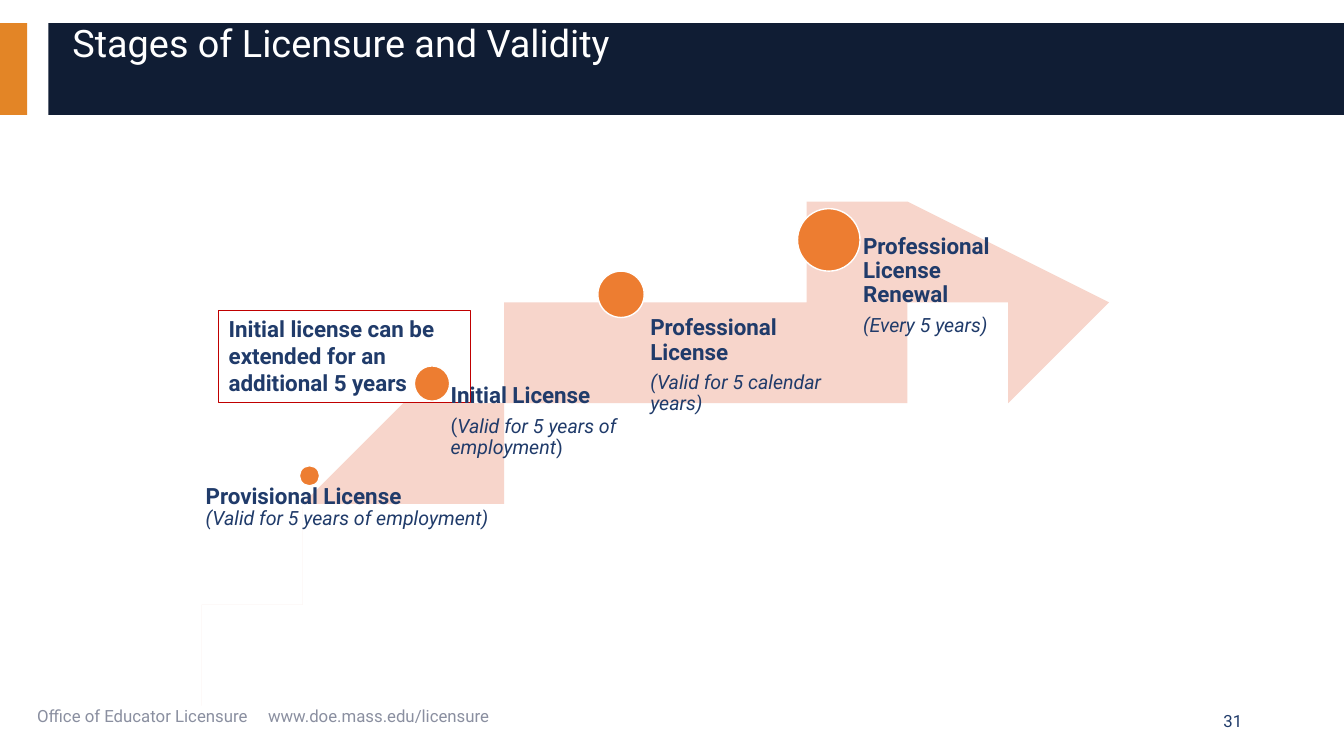
from dataclasses import dataclass

from lxml import etree
from pptx import Presentation
from pptx.dml.color import RGBColor
from pptx.enum.shapes import MSO_SHAPE as Shape
from pptx.enum.text import MSO_ANCHOR as Anchor, PP_ALIGN as Align
from pptx.oxml.ns import qn
from pptx.util import Inches, Pt


@dataclass(frozen=True)
class Theme:
    font: str = "Roboto"
    navy: str = "101D34"
    blue: str = "203B6A"
    gold: str = "E38526"
    orange: str = "ED7D31"
    peach: str = "F7D5CB"
    red: str = "C00000"
    gray: str = "8A8FA0"
    white: str = "FFFFFF"
    title: float = 27
    heading: float = 16
    detail: float = 14
    footer: float = 12


theme = Theme()
presentation = Presentation()
presentation.slide_width = Inches(13.33)
presentation.slide_height = Inches(7.5)
slide = presentation.slides.add_slide(presentation.slide_layouts[6])


def paint(shape, fill=None, line=None, width=1):
    shape.shadow.inherit = False
    if fill:
        shape.fill.solid()
        shape.fill.fore_color.rgb = RGBColor.from_string(fill)
    else:
        shape.fill.background()
    if line:
        shape.line.color.rgb = RGBColor.from_string(line)
        shape.line.width = Pt(width)
    else:
        shape.line.fill.background()


def write(shape, paragraphs, color, margins=(0.1, 0.05, 0.1, 0.05),
          anchor=Anchor.TOP, align=Align.LEFT, spacing=1.0, gap=0):
    """Each paragraph is a list of runs: (text, size, bold, italic)."""
    frame = shape.text_frame
    frame.word_wrap = True
    frame.vertical_anchor = anchor
    (frame.margin_left, frame.margin_top,
     frame.margin_right, frame.margin_bottom) = map(Inches, margins)
    for index, runs in enumerate(paragraphs):
        paragraph = frame.add_paragraph() if index else frame.paragraphs[0]
        paragraph.alignment = align
        paragraph.line_spacing = spacing
        if index:
            paragraph.space_before = Pt(gap)
        for text, size, bold, italic in runs:
            run = paragraph.add_run()
            run.text = text
            run.font.name = theme.font
            run.font.size = Pt(size)
            run.font.bold = bold
            run.font.italic = italic
            run.font.color.rgb = RGBColor.from_string(color)


# Header band and title
for left, width, color in [(0, 0.27, theme.gold), (0.48, 12.85, theme.navy)]:
    band = slide.shapes.add_shape(
        Shape.RECTANGLE, Inches(left), Inches(0.23), Inches(width), Inches(0.91))
    paint(band, color)
title = slide.shapes.add_textbox(Inches(0.62), Inches(0.2), Inches(12.44), Inches(0.5))
write(title, [[("Stages of Licensure and Validity", theme.title, False, False)]],
      theme.white, spacing=0.9)

# Footer: office and web address parted by a tab stop, then the page number
footer = slide.shapes.add_textbox(Inches(0.27), Inches(6.95), Inches(8.44), Inches(0.3))
properties = footer.text_frame.paragraphs[0]._p.get_or_add_pPr()
tabs = etree.SubElement(properties, qn("a:tabLst"))
etree.SubElement(tabs, qn("a:tab"), pos=str(Inches(2.29)), algn="l")
write(footer, [[("Office of Educator Licensure\t", theme.footer, False, False),
                ("www.doe.mass.edu/licensure", theme.footer, False, False)]], theme.gray)
number = slide.shapes.add_textbox(Inches(9.42), Inches(6.95), Inches(3), Inches(0.4))
write(number, [[("31", theme.footer, False, False)]], theme.blue,
      anchor=Anchor.MIDDLE, align=Align.RIGHT)

# Extension note
note = slide.shapes.add_shape(
    Shape.RECTANGLE, Inches(2.17), Inches(3.08), Inches(2.5), Inches(0.91))
paint(note, line=theme.red, width=0.75)
write(note, [[("Initial license can be extended for an additional 5 years",
               theme.heading, True, False)]], theme.blue)

# Swoosh arrow: two Bezier edges joined by the arrowhead
upper_edge = [(1.94, 6.54), (2.91, 4.34), (5.42, 2.89), (9.47, 2.2)]
arrowhead = [(9.4, 1.58), (10.71, 2.58), (9.68, 4.06)]
lower_edge = [(9.61, 3.44), (5.96, 3.72), (3.4, 4.75), (1.94, 6.54)]
steps = 48
edges = []
for controls in (upper_edge, lower_edge):
    points = []
    for step in range(steps + 1):
        t = step / steps
        weights = ((1 - t) ** 3, 3 * t * (1 - t) ** 2, 3 * t ** 2 * (1 - t), t ** 3)
        points.append(tuple(sum(w * c for w, c in zip(weights, axis))
                            for axis in zip(*controls)))
    edges.append(points)
outline = edges[0] + arrowhead + edges[1]
builder = slide.shapes.build_freeform(*outline[0], scale=Inches(1))
builder.add_line_segments(outline[1:], close=True)
paint(builder.convert_to_shape(), theme.peach)

# Stages: dot (left, top, size), label box, left inset, gap, heading, detail runs
stages = [
    ((2.97, 4.62, 0.2), (1.93, 4.81, 3.21, 1.7), 0.11, 0, "Provisional License",
     [("(Valid for 5 years of employment)", True)]),
    ((4.11, 3.63, 0.35), (4.28, 3.81, 1.84, 2.51), 0.19, 5.6, "Initial License",
     [("(", False), ("Valid for 5 years of employment", True), (")", False)]),
    ((5.93, 2.69, 0.46), (6.2, 3.14, 2.12, 3.39), 0.25, 5.6, "Professional License",
     [("(Valid for 5 calendar years)", True)]),
    ((7.91, 2.07, 0.62), (8.23, 2.33, 1.82, 4.04), 0.33, 5.6,
     "Professional License Renewal", [("(Every 5 years)", True)]),
]
for (left, top, size), box, inset, gap, heading, details in stages:
    dot = slide.shapes.add_shape(
        Shape.OVAL, Inches(left), Inches(top), Inches(size), Inches(size))
    paint(dot, theme.orange, theme.white)
    label = slide.shapes.add_textbox(*map(Inches, box))
    write(label,
          [[(heading, theme.heading, True, False)],
           [(text, theme.detail, False, italic) for text, italic in details]],
          theme.blue, margins=(inset, 0, 0, 0), spacing=0.9, gap=gap)

presentation.save("out.pptx")
